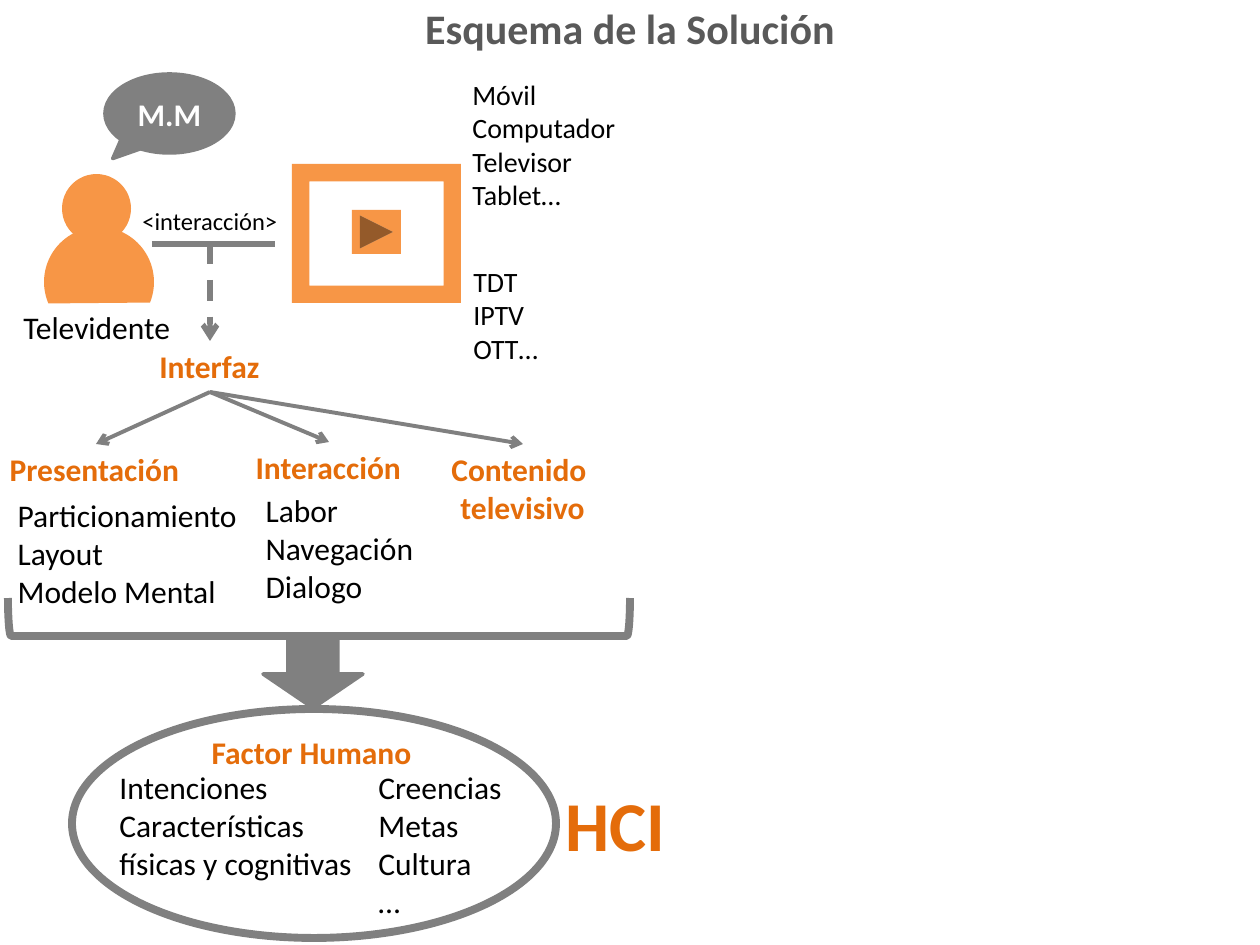
from dataclasses import dataclass
from typing import NamedTuple

from lxml.etree import SubElement
from pptx import Presentation
from pptx.dml.color import RGBColor
from pptx.enum.dml import MSO_LINE_DASH_STYLE as Dash
from pptx.enum.shapes import MSO_CONNECTOR, MSO_SHAPE as Preset
from pptx.enum.text import MSO_ANCHOR as Anchor, MSO_AUTO_SIZE as AutoSize, PP_ALIGN as Align
from pptx.oxml.ns import qn
from pptx.util import Emu, Pt

EMU_PER_PX = 914400 / 126


@dataclass(frozen=True)
class Theme:
    font: str = "Calibri"
    orange: str = "F79646"
    accent: str = "E46C0A"
    gray: str = "808080"
    heading: str = "595959"
    black: str = "000000"
    white: str = "FFFFFF"
    tiny: int = 14
    small: int = 16
    body: int = 18
    title: int = 24
    huge: int = 40


THEME = Theme()


class Box(NamedTuple):
    left: int
    top: int
    width: int
    height: int


class Point(NamedTuple):
    x: int
    y: int


class Label(NamedTuple):
    box: Box
    text: str
    size: int = THEME.body
    color: str = THEME.black
    bold: bool = False
    align: Align = Align.LEFT
    wrap: bool = False


class Figure(NamedTuple):
    preset: Preset
    box: Box
    fill: str | None = None
    line: str | None = None
    weight: float = 0
    rotation: int = 0


class Link(NamedTuple):
    start: Point
    end: Point
    weight: float
    arrow: bool = True
    dashed: bool = False


def px(length: int) -> Emu:
    return Emu(round(length * EMU_PER_PX))


def place(shape, box: Box) -> None:
    shape.left, shape.top, shape.width, shape.height = map(px, box)


def write(shape, text: str, *, size: int = THEME.body, color: str = THEME.black,
          bold: bool = False, align: Align = Align.LEFT, wrap: bool = False,
          anchor: Anchor = Anchor.TOP) -> None:
    """Fill a shape with one paragraph per line of text, without bullets."""
    frame = shape.text_frame
    frame.text = text
    frame.auto_size = AutoSize.NONE
    frame.word_wrap = wrap
    frame.vertical_anchor = anchor
    for paragraph in frame.paragraphs:
        paragraph.alignment = align
        paragraph.space_before = Pt(0)
        if shape.is_placeholder:
            properties = paragraph._p.get_or_add_pPr()
            properties.set("marL", "0")
            properties.set("indent", "0")
            SubElement(properties, qn("a:buNone"))
        for run in paragraph.runs:
            run.font.name = THEME.font
            run.font.size = Pt(size)
            run.font.bold = bold
            run.font.color.rgb = RGBColor.from_string(color)


def write_label(shape, label: Label) -> None:
    write(shape, label.text, size=label.size, color=label.color,
          bold=label.bold, align=label.align, wrap=label.wrap)


def draw_figure(slide, figure: Figure):
    shape = slide.shapes.add_shape(figure.preset, *map(px, figure.box))
    shape.shadow.inherit = False
    shape.rotation = figure.rotation
    if figure.fill:
        shape.fill.solid()
        shape.fill.fore_color.rgb = RGBColor.from_string(figure.fill)
    else:
        shape.fill.background()
    if figure.line:
        shape.line.color.rgb = RGBColor.from_string(figure.line)
        shape.line.width = Pt(figure.weight)
    else:
        shape.line.fill.background()
    return shape


def draw_link(slide, link: Link) -> None:
    connector = slide.shapes.add_connector(
        MSO_CONNECTOR.STRAIGHT, *map(px, (*link.start, *link.end)))
    connector.line.color.rgb = RGBColor.from_string(THEME.gray)
    connector.line.width = Pt(link.weight)
    if link.dashed:
        connector.line.dash_style = Dash.DASH
    if link.arrow:
        SubElement(connector.line._get_or_add_ln(), qn("a:tailEnd"), type="arrow")
    SubElement(connector._element.spPr, qn("a:effectLst"))


def heading(box: Box, text: str, **extra) -> Label:
    return Label(box, text, color=THEME.accent, bold=True, **extra)


# Title, and the two interface parts that carry a list
PLACEHOLDERS = {
    0: Label(Box(0, -4, 1260, 63), "Esquema de la Solución", THEME.title,
             THEME.heading, True, Align.CENTER, True),
    1: heading(Box(-3, 444, 195, 50), "Presentación"),
    2: Label(Box(5, 490, 247, 127), "Particionamiento\nLayout\nModelo Mental"),
    3: heading(Box(243, 442, 171, 50), "Interacción"),
    4: Label(Box(253, 485, 175, 127), "Labor\nNavegación\nDialogo"),
}

FIGURES = [
    # Screen with play button
    Figure(Preset.FRAME, Box(292, 164, 169, 139), THEME.orange),
    Figure(Preset.ACTION_BUTTON_FORWARD_OR_NEXT, Box(352, 210, 49, 44), THEME.orange),
    # Viewer: head and body
    Figure(Preset.OVAL, Box(62, 174, 69, 69), THEME.orange),
    Figure(Preset.CHORD, Box(44, 227, 110, 110), THEME.orange, rotation=112),
    # Bracket, human factor oval and the arrow joining them
    Figure(Preset.LEFT_BRACKET, Box(300, 306, 38, 622), None, THEME.gray, 4.5, 270),
    Figure(Preset.OVAL, Box(72, 709, 484, 229), None, THEME.gray, 4.5),
    Figure(Preset.DOWN_ARROW, Box(263, 640, 100, 68), THEME.gray, THEME.gray, 2),
]
THOUGHT = Figure(Preset.OVAL_CALLOUT, Box(105, 74, 129, 79), THEME.gray, THEME.gray, 2)

INTERFACE = Point(210, 392)
PART_TIPS = [Point(96, 444), Point(329, 442), Point(523, 444)]
LINKS = [
    Link(Point(152, 244), Point(275, 244), 3, arrow=False),
    Link(Point(210, 243), Point(210, 341), 3, dashed=True),
    *(Link(INTERFACE, tip, 2.25) for tip in PART_TIPS),
]

LABELS = [
    Label(Box(130, 200, 161, 43), "<interacción>", THEME.tiny),
    Label(Box(11, 302, 174, 50), "Televidente"),
    Label(Box(460, 71, 170, 149), "Móvil\nComputador\nTelevisor\nTablet…", THEME.small),
    Label(Box(461, 258, 91, 115), "TDT\nIPTV\nOTT…", THEME.small),
    heading(Box(147, 341, 126, 50), "Interfaz"),
    heading(Box(438, 444, 169, 89), "Contenido \ntelevisivo", align=Align.CENTER),
    heading(Box(-6, 727, 635, 50), "Factor Humano", align=Align.CENTER, wrap=True),
    Label(Box(107, 762, 284, 127), "Intenciones\nCaracterísticas físicas y cognitivas",
          wrap=True),
    Label(Box(366, 762, 160, 165), "Creencias\nMetas\nCultura\n…"),
    heading(Box(553, 775, 126, 97), "HCI", size=THEME.huge),
]


def main() -> None:
    deck = Presentation()
    deck.slide_width, deck.slide_height = px(1260), px(945)
    slide = deck.slides.add_slide(deck.slide_layouts[4])

    for index, label in PLACEHOLDERS.items():
        placeholder = slide.placeholders[index]
        place(placeholder, label.box)
        write_label(placeholder, label)
    for figure in FIGURES:
        draw_figure(slide, figure)
    for link in LINKS:
        draw_link(slide, link)

    thought = draw_figure(slide, THOUGHT)
    thought.adjustments[0], thought.adjustments[1] = -0.44, 0.57
    write(thought, "M.M", color=THEME.white, bold=True,
          align=Align.CENTER, anchor=Anchor.MIDDLE)
    for label in LABELS:
        write_label(slide.shapes.add_textbox(*map(px, label.box)), label)

    deck.save("out.pptx")


if __name__ == "__main__":
    main()
